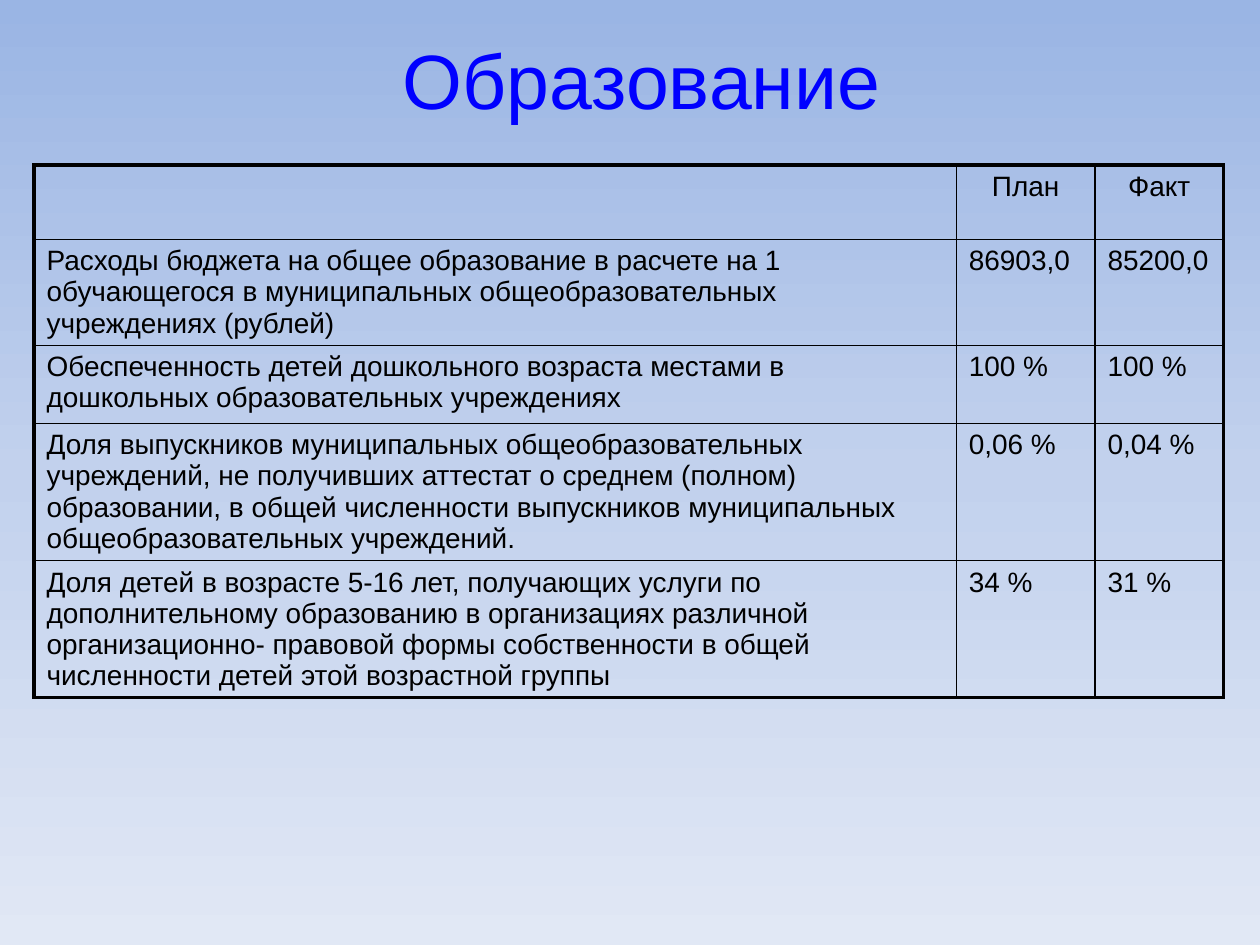
import copy
from dataclasses import dataclass

import lxml.etree
import pptx
import pptx.dml.color
import pptx.enum.text
import pptx.oxml.ns
import pptx.util

ALIGN = pptx.enum.text.PP_ALIGN


@dataclass(frozen=True)
class Theme:
    font: str = "Arial"
    title_size: int = 44
    cell_size: int = 16
    title_color: str = "0000FF"
    ink: str = "000000"
    background: tuple = ((0, "9AB5E4"), (0.5, "C2D1ED"), (1, "E1E8F5"))
    outer_line: float = 2.25
    inner_line: float = 1


@dataclass(frozen=True)
class Indicator:
    name: str
    plan: str
    fact: str


THEME = Theme()
WIDTH, HEIGHT = 10, 7.5
COLUMNS = (7.32, 1.1, 1.02)
ROWS = (0.59, 0.84, 0.62, 1.09, 1.08)
INDICATORS = (
    Indicator("", "План", "Факт"),
    Indicator("Расходы бюджета на общее образование в расчете на 1 обучающегося "
              "в муниципальных общеобразовательных учреждениях (рублей)",
              "86903,0", "85200,0"),
    Indicator("Обеспеченность детей дошкольного возраста местами в дошкольных "
              "образовательных учреждениях", "100 %", "100 %"),
    Indicator("Доля выпускников муниципальных общеобразовательных учреждений, "
              "не получивших аттестат о среднем (полном) образовании, в общей "
              "численности выпускников муниципальных общеобразовательных учреждений.",
              "0,06 %", "0,04 %"),
    Indicator("Доля детей в возрасте 5-16 лет, получающих услуги по дополнительному "
              "образованию в организациях различной организационно- правовой формы "
              "собственности в общей численности детей этой возрастной группы",
              "34 %", "31 %"),
)


def rgb(color: str):
    return pptx.dml.color.RGBColor.from_string(color)


def style_paragraph(para, size: int, color: str, align) -> None:
    para.alignment = align
    para.font.name = THEME.font
    para.font.size = pptx.util.Pt(size)
    para.font.color.rgb = rgb(color)


def paint_background(page) -> None:
    fill = page.background.fill
    fill.gradient()
    fill.gradient_angle = 270
    # The default gradient has two stops; add the middle one
    stop_list = next(page.element.iter(pptx.oxml.ns.qn("a:gsLst")))
    stop_list.insert(1, copy.deepcopy(stop_list[0]))
    for stop, (position, color) in zip(fill.gradient_stops, THEME.background):
        stop.position = position
        stop.color.rgb = rgb(color)


def add_title(page, text: str) -> None:
    title = page.shapes.title
    title.left, title.top = pptx.util.Inches(0.51), 0
    title.width, title.height = pptx.util.Inches(9), pptx.util.Inches(1.25)
    title.text_frame.text = text
    title.text_frame.vertical_anchor = pptx.enum.text.MSO_ANCHOR.MIDDLE
    style_paragraph(title.text_frame.paragraphs[0], THEME.title_size,
                    THEME.title_color, ALIGN.CENTER)


def set_borders(cell, outer_edges: dict[str, bool]) -> None:
    """Draw each edge, thick where it lies on the table's outline."""
    properties = cell._tc.get_or_add_tcPr()
    qn = pptx.oxml.ns.qn
    for index, (edge, is_outer) in enumerate(outer_edges.items()):
        points = THEME.outer_line if is_outer else THEME.inner_line
        line = lxml.etree.Element(qn(f"a:{edge}"), w=str(pptx.util.Pt(points)))
        solid = lxml.etree.SubElement(line, qn("a:solidFill"))
        lxml.etree.SubElement(solid, qn("a:srgbClr"), val=THEME.ink)
        properties.insert(index, line)


def add_indicator_table(page) -> None:
    frame = page.shapes.add_table(
        len(ROWS), len(COLUMNS), pptx.util.Inches(0.27), pptx.util.Inches(1.31),
        pptx.util.Inches(sum(COLUMNS)), pptx.util.Inches(sum(ROWS)))
    table = frame.table
    table.first_row = table.horz_banding = False
    for column, width in zip(table.columns, COLUMNS):
        column.width = pptx.util.Inches(width)
    for row, height in zip(table.rows, ROWS):
        row.height = pptx.util.Inches(height)

    for r, item in enumerate(INDICATORS):
        for c, text in enumerate((item.name, item.plan, item.fact)):
            cell = table.cell(r, c)
            cell.text = text
            cell.fill.background()
            style_paragraph(cell.text_frame.paragraphs[0], THEME.cell_size,
                            THEME.ink, ALIGN.CENTER if r == 0 else ALIGN.LEFT)
            set_borders(cell, {"lnL": c == 0, "lnR": c == len(COLUMNS) - 1,
                               "lnT": r == 0, "lnB": r == len(ROWS) - 1})


def main() -> None:
    deck = pptx.Presentation()
    deck.slide_width = pptx.util.Inches(WIDTH)
    deck.slide_height = pptx.util.Inches(HEIGHT)
    page = deck.slides.add_slide(deck.slide_layouts[5])  # Title only
    paint_background(page)
    add_title(page, " Образование")
    add_indicator_table(page)
    deck.save("out.pptx")


if __name__ == "__main__":
    main()
